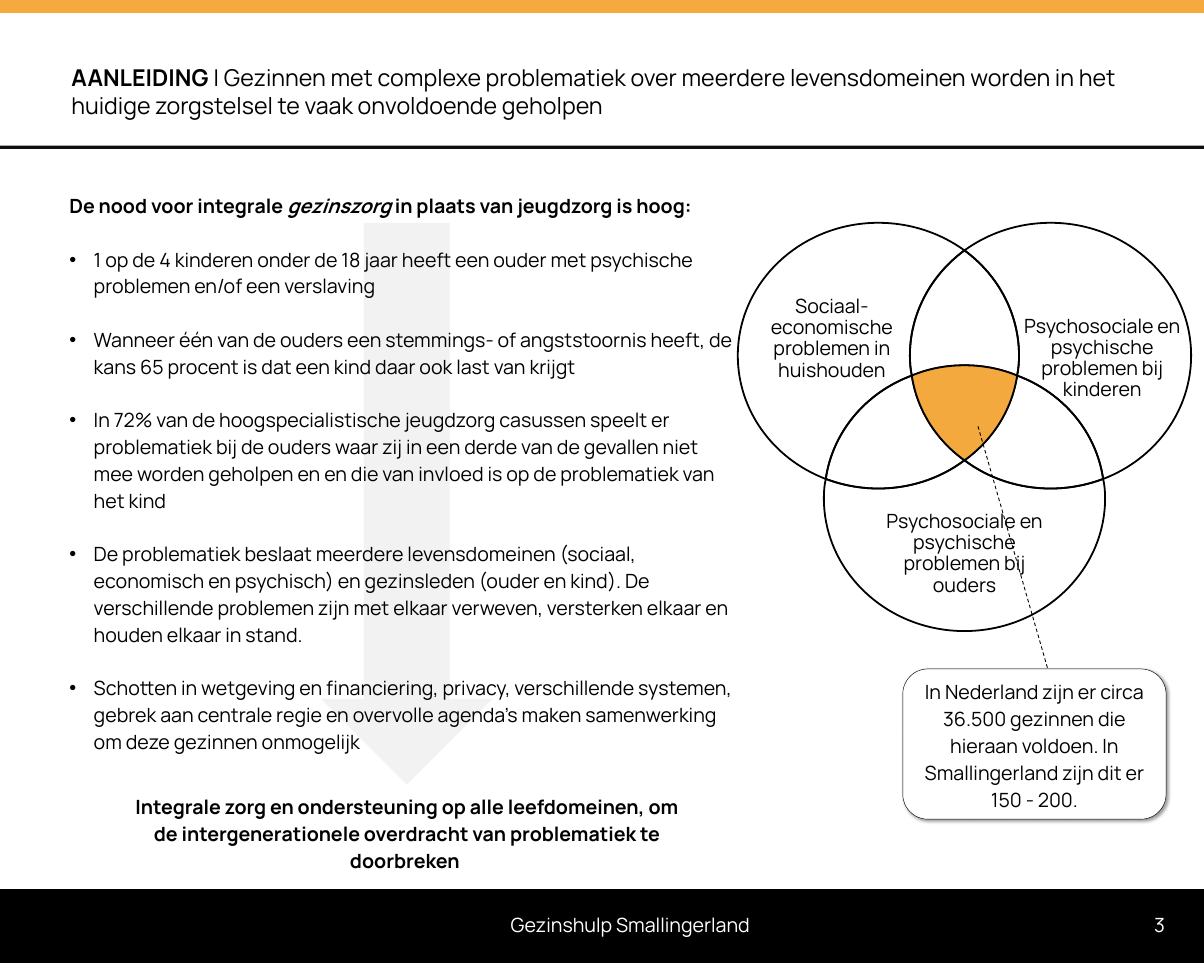
import math
from lxml import etree
from pptx import Presentation
from pptx.dml.color import RGBColor
from pptx.enum import dml, shapes, text
from pptx.oxml import parse_xml
from pptx.oxml.ns import nsdecls, qn
from pptx.util import Inches, Pt

BLACK = RGBColor(0x00, 0x00, 0x00)
WHITE = RGBColor(0xFF, 0xFF, 0xFF)
ORANGE = RGBColor(0xF5, 0xA9, 0x3F)
CORE = RGBColor(0xF4, 0xA9, 0x3F)
RULE = RGBColor(0x0D, 0x0D, 0x0D)
PALE = RGBColor(0xF2, 0xF2, 0xF2)
FONT = "Manrope"
CENTER, LEFT = text.PP_ALIGN.CENTER, text.PP_ALIGN.LEFT
TOP, MIDDLE = text.MSO_ANCHOR.TOP, text.MSO_ANCHOR.MIDDLE

# Content: runs are (text, style), style holding b for bold and i for italic
TITLE = [("AANLEIDING", "b"),
         (" | Gezinnen met complexe problematiek over meerdere levensdomeinen worden in het "
          "huidige zorgstelsel te vaak onvoldoende geholpen", "")]
HEADING = [("De nood voor integrale ", "b"), ("gezinszorg", "bi"),
           (" in plaats van jeugdzorg is hoog:", "b")]
BULLETS = [
    "1 op de 4 kinderen onder de 18 jaar heeft een ouder met psychische problemen en/of een verslaving",
    "Wanneer één van de ouders een stemmings- of angststoornis heeft, de kans 65 procent is dat een "
    "kind daar ook last van krijgt",
    "In 72% van de hoogspecialistische jeugdzorg casussen speelt er problematiek bij de ouders waar zij "
    "in een derde van de gevallen niet mee worden geholpen en en die van invloed is op de problematiek "
    "van het kind",
    "De problematiek beslaat meerdere levensdomeinen (sociaal, economisch en psychisch) en gezinsleden "
    "(ouder en kind). De verschillende problemen zijn met elkaar verweven, versterken elkaar en houden "
    "elkaar in stand.",
    "Schotten in wetgeving en financiering, privacy, verschillende systemen, gebrek aan centrale regie "
    "en overvolle agenda’s maken samenwerking om deze gezinnen onmogelijk",
]
CONCLUSION = ("Integrale zorg en ondersteuning op alle leefdomeinen, om de intergenerationele "
              "overdracht van problematiek te doorbreken ")
CALLOUT = ("In Nederland zijn er circa 36.500 gezinnen die hieraan voldoen. "
           "In Smallingerland zijn dit er 150 - 200.")
VENN_LABELS = [
    ("Sociaal-economische problemen in huishouden", (11.59, 4.57, 2.73, 1.64)),
    ("Psychosociale en psychische problemen bij kinderen", (15.76, 4.88, 2.81, 1.44)),
    ("Psychosociale en psychische problemen bij ouders", (13.66, 7.92, 2.72, 1.44)),
]
FOOTER = [("3", (17.56, 14.03, 1, 0.8)),
          ("Gezinshulp Smallingerland", (6.21, 14.03, 7.21, 0.8))]
BARS = [((0, 0, 18.75, 0.2), ORANGE), ((0, 2.27, 18.75, 0.05), RULE),
        ((0, 13.85, 18.75, 1.15), BLACK)]

# Venn: ellipse centres, their crossings, and regions as (ellipse, from, to, turn) arcs
RX, RY = 2.19, 2.07
CENTERS = {"household": (13.68, 5.54), "children": (16.36, 5.54), "parents": (15.02, 7.76)}
CROSSINGS = {"top": (15.02, 3.9), "base": (15.02, 7.17), "left": (12.86, 7.46),
             "right": (17.18, 7.46), "inner_left": (14.2, 5.85), "inner_right": (15.84, 5.85)}
REGIONS = [
    ([("parents", "right", "left", 1), ("household", "left", "base", -1),
      ("children", "base", "right", -1)], None),
    ([("children", "top", "right", 1), ("parents", "right", "inner_right", -1),
      ("household", "inner_right", "top", -1)], None),
    ([("household", "top", "inner_right", 1), ("parents", "inner_right", "inner_left", -1),
      ("children", "inner_left", "top", 1)], None),
    ([("parents", "inner_right", "right", 1), ("children", "right", "base", 1),
      ("household", "base", "inner_right", -1)], None),
    ([("parents", "left", "inner_left", 1), ("children", "inner_left", "base", -1),
      ("household", "base", "left", 1)], None),
    ([("household", "top", "left", -1), ("parents", "left", "inner_left", 1),
      ("children", "inner_left", "top", 1)], None),
    ([("parents", "inner_left", "inner_right", 1), ("household", "inner_right", "base", 1),
      ("children", "base", "inner_left", 1)], CORE),
]


def place(sp, box):
    sp.left, sp.top, sp.width, sp.height = map(Inches, box)


def paint(sp, fill=None, line=0):
    sp.shadow.inherit = False
    if fill is None:
        sp.fill.background()
    else:
        sp.fill.solid()
        sp.fill.fore_color.rgb = fill
    if line:
        sp.line.color.rgb = BLACK
        sp.line.width = Pt(line)
    else:
        sp.line.fill.background()


def frame(sp, anchor, insets=(0.1, 0.05)):
    tf = sp.text_frame
    tf.word_wrap = True
    tf.auto_size = text.MSO_AUTO_SIZE.NONE
    tf.vertical_anchor = anchor
    tf.margin_left = tf.margin_right = Inches(insets[0])
    tf.margin_top = tf.margin_bottom = Inches(insets[1])
    return tf


def write(p, runs, size=22, color=BLACK, align=CENTER, spacing=1.14, before=0):
    p.alignment, p.line_spacing = align, spacing
    p.space_before, p.space_after = Pt(before), Pt(0)
    for words, style in runs:
        r = p.add_run()
        r.text = words
        r.font.name, r.font.size = FONT, Pt(size)
        r.font.bold, r.font.italic = "b" in style, "i" in style
        r.font.color.rgb = color


def set_bullet(p, char=None, indent=0):
    pPr = p._p.get_or_add_pPr()
    pPr.set("marL", str(Inches(indent)))
    pPr.set("indent", str(-Inches(indent)))
    if char:
        etree.SubElement(pPr, qn("a:buFont")).set("typeface", "Arial")
        etree.SubElement(pPr, qn("a:buChar")).set("char", char)
    else:
        etree.SubElement(pPr, qn("a:buNone"))


def label(s, words, box, color=BLACK, anchor=TOP):
    tf = frame(s.shapes.add_textbox(*map(Inches, box)), anchor)
    write(tf.paragraphs[0], [(words, "")], color=color, spacing=0.9)


def arc(ellipse, start, end, turn):
    """Bezier points (control, control, end) of an arc, split at the quadrants."""
    cx, cy = CENTERS[ellipse]
    a, b = (math.atan2((y - cy) / RY, (x - cx) / RX)
            for x, y in (CROSSINGS[start], CROSSINGS[end]))
    b = a + turn * ((turn * (b - a)) % math.tau)
    quadrants = [k * math.pi / 2 for k in range(-8, 9)]
    cuts = sorted([a, b] + [q for q in quadrants if min(a, b) < q < max(a, b)],
                  reverse=turn < 0)
    points = []
    for t, u in zip(cuts, cuts[1:]):
        k = 4 / 3 * math.tan((u - t) / 4)
        for angle, pull in ((t, k), (u, -k), (u, 0)):
            points.append((cx + RX * (math.cos(angle) - pull * math.sin(angle)),
                           cy + RY * (math.sin(angle) + pull * math.cos(angle))))
    return points[:-1] + [CROSSINGS[end]]


def add_region(s, arcs):
    points = [CROSSINGS[arcs[0][1]]] + [pt for part in arcs for pt in arc(*part)]
    points = [(Inches(x), Inches(y)) for x, y in points]
    builder = s.shapes.build_freeform(*points[0])
    builder.add_line_segments(points[1:], close=True)
    sp = builder.convert_to_shape()
    # Turn each three line ends into one curve
    lines = list(sp._element.iter(qn("a:lnTo")))
    for i in range(0, len(lines), 3):
        curve = etree.Element(qn("a:cubicBezTo"))
        lines[i].addprevious(curve)
        for line in lines[i:i + 3]:
            curve.append(line[0])
            line.getparent().remove(line)
    return sp


def main():
    prs = Presentation()
    prs.slide_width, prs.slide_height = Inches(18.75), Inches(15)
    s = prs.slides.add_slide(prs.slide_layouts[1])
    title, body = s.placeholders

    # Bars, footer and background arrow
    for box, color in BARS:
        paint(s.shapes.add_shape(shapes.MSO_SHAPE.RECTANGLE, *map(Inches, box)), color)
    for words, box in FOOTER:
        label(s, words, box, WHITE, MIDDLE)
    arrow = s.shapes.add_shape(shapes.MSO_SHAPE.DOWN_ARROW, *map(Inches, (5, 3.47, 2.67, 8.75)))
    paint(arrow, PALE)

    # Title and list, in front of the arrow
    arrow._element.addnext(body._element)
    arrow._element.addnext(title._element)
    place(title, (1.01, 0.89, 16.95, 0.95))
    p = frame(title, TOP, (0.1, 0.1)).paragraphs[0]
    write(p, TITLE, size=26, align=LEFT, spacing=1.0)
    place(body, (0.98, 2.92, 10.61, 8.52))
    tf = frame(body, TOP)
    set_bullet(tf.paragraphs[0])
    write(tf.paragraphs[0], HEADING, align=LEFT)
    for words in BULLETS:
        p = tf.add_paragraph()
        set_bullet(p, "•", 0.38)
        write(p, [(words, "")], align=LEFT, before=30)

    # Venn diagram
    for arcs, color in REGIONS:
        paint(add_region(s, arcs), color, 2)
    for words, box in VENN_LABELS:
        label(s, words, box)

    # Dashed leader to the callout
    leader = s.shapes.add_connector(shapes.MSO_CONNECTOR.STRAIGHT,
                                    *map(Inches, (15.23, 6.64, 16.53, 11.16)))
    leader.line.color.rgb = BLACK
    leader.line.width = Pt(1)
    leader.line.dash_style = dml.MSO_LINE.DASH
    etree.SubElement(leader._element.spPr, qn("a:effectLst"))

    # Conclusion and callout
    conclusion = s.shapes.add_textbox(*map(Inches, (1.82, 11.99, 9.03, 1.94)))
    write(frame(conclusion, MIDDLE, (0.2, 0)).paragraphs[0], [(CONCLUSION, "b")])
    callout = s.shapes.add_shape(shapes.MSO_SHAPE.ROUNDED_RECTANGLE,
                                 *map(Inches, (14.06, 10.42, 4.1, 2.34)))
    paint(callout, WHITE, 0.5)
    callout._element.spPr.find(qn("a:effectLst")).append(parse_xml(
        f'<a:outerShdw {nsdecls("a")} blurRad="{Pt(4)}" dist="{Pt(3)}" dir="2700000" algn="tl">'
        '<a:srgbClr val="000000"><a:alpha val="40000"/></a:srgbClr></a:outerShdw>'))
    write(frame(callout, MIDDLE, (0.2, 0)).paragraphs[0], [(CALLOUT, "")])

    prs.save("out.pptx")


if __name__ == "__main__":
    main()
